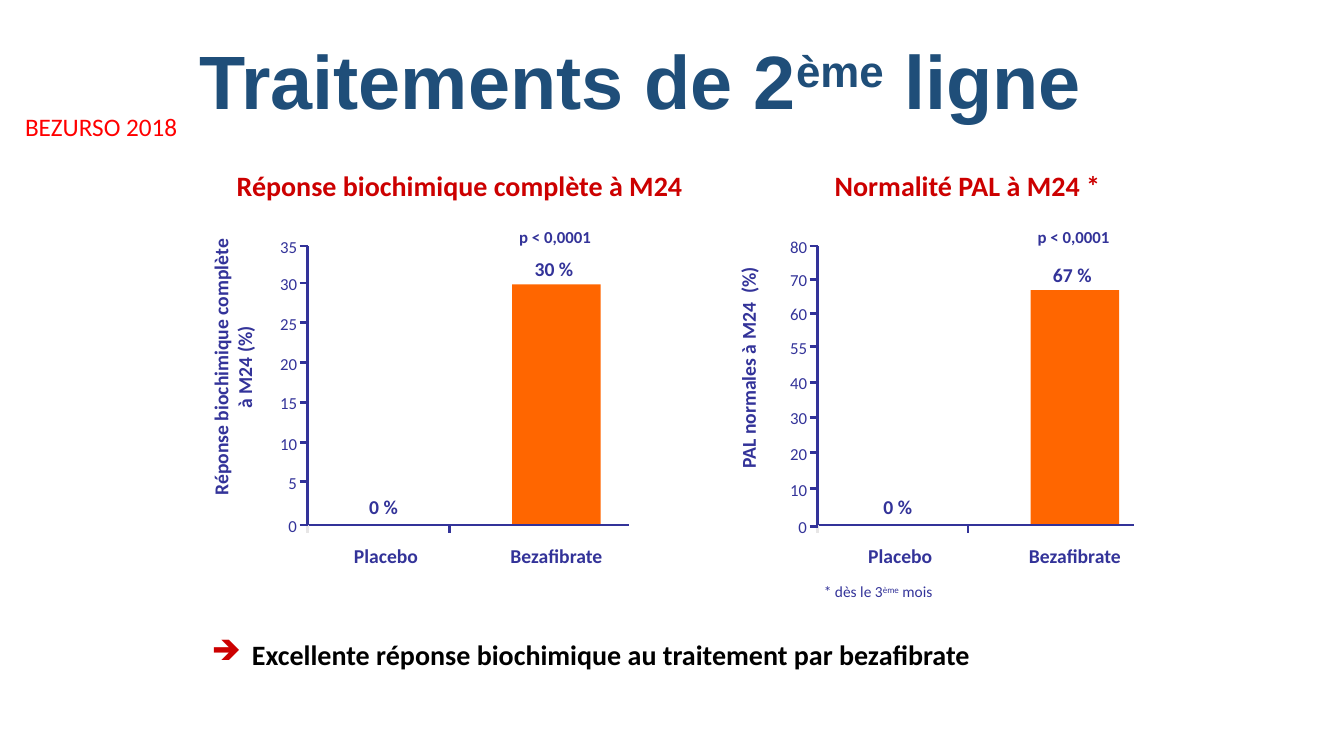
from pptx import Presentation
from pptx.dml.color import RGBColor
from pptx.enum.shapes import MSO_CONNECTOR, MSO_SHAPE
from pptx.enum.text import MSO_AUTO_SIZE, PP_ALIGN
from pptx.oxml.ns import qn
from pptx.util import Inches, Pt
from lxml.etree import SubElement

CELL = Inches(7.5) / 18
AXIS_TOP, AXIS_BOTTOM = 5.86, 12.5
TICK = 0.19
BAR_WIDTH = 2.11
INK, RED, ORANGE, PALE = "333399", "CC0000", "FF6600", "E7E6E6"

LEFT_TICKS = {"0": 12.5, "5": 11.47, "10": 10.54, "15": 9.58,
              "20": 8.64, "25": 7.68, "30": 6.74, "35": 5.86}
RIGHT_TICKS = {"0": 12.53, "10": 11.64, "20": 10.78, "30": 9.94, "40": 9.1,
               "55": 8.26, "60": 7.46, "70": 6.65, "80": 5.86}


def grid(*cells):
    return [round(c * CELL) for c in cells]


def rgb(value):
    return RGBColor.from_string(value)


def add_text(s, box, parts, size, color=INK, bold=False, align=None,
             inset=True, wrap=False, font="Calibri", rotation=0):
    sp = s.shapes.add_textbox(*grid(*box))
    sp.rotation = rotation
    tf = sp.text_frame
    tf.word_wrap = wrap
    tf.auto_size = MSO_AUTO_SIZE.SHAPE_TO_FIT_TEXT
    if not inset:
        tf.margin_left = tf.margin_right = tf.margin_top = tf.margin_bottom = 0
    p = tf.paragraphs[0]
    p.alignment = align
    p.text = parts[0]
    for part in parts[1:]:
        p.add_run().text = part
    for r in p.runs:
        r.font.name = font
        r.font.size = Pt(size)
        r.font.bold = bold
        r.font.color.rgb = rgb(color)
    if len(parts) > 1:
        p.runs[1].font._element.set("baseline", "30000")
    return p


def add_label(s, center, top, width, text, size=14):
    height = size / 29
    add_text(s, (center - width / 2, top, width, height), [text], size,
             bold=True, align=PP_ALIGN.CENTER, inset=False)


def add_line(s, x1, y1, x2, y2, color=INK):
    cx = s.shapes.add_connector(MSO_CONNECTOR.STRAIGHT, *grid(x1, y1, x2, y2))
    cx.line.color.rgb = rgb(color)
    cx.line.width = Pt(0)
    SubElement(cx._element.spPr, qn("a:effectLst"))


def add_bar(s, left, top):
    sp = s.shapes.add_shape(MSO_SHAPE.RECTANGLE,
                            *grid(left, top, BAR_WIDTH, AXIS_BOTTOM - top))
    sp.shadow.inherit = False
    sp.fill.solid()
    sp.fill.fore_color.rgb = rgb(ORANGE)
    sp.line.fill.background()


def add_bullet(p, char, color, indent):
    pPr = p._p.get_or_add_pPr()
    pPr.set("marL", str(indent))
    pPr.set("indent", str(-indent))
    clr = SubElement(pPr, qn("a:buClr"))
    SubElement(clr, qn("a:srgbClr")).set("val", color)
    SubElement(pPr, qn("a:buChar")).set("char", char)


def add_bar_panel(s, axis, end, divider, ticks, bar, bar_top, value, placebo):
    add_bar(s, bar, bar_top)
    add_line(s, axis, AXIS_TOP, axis, AXIS_BOTTOM)
    add_line(s, axis, AXIS_BOTTOM, end, AXIS_BOTTOM)
    for x, color in ((axis, PALE), (divider, INK)):
        add_line(s, x, AXIS_BOTTOM + TICK, x, AXIS_BOTTOM, color)
    for text, y in ticks.items():
        add_line(s, axis - TICK, y, axis, y)
        width = 0.21 * len(text)
        add_text(s, (axis - 0.25 - width, y - 0.22, width, 0.48), [text], 12,
                 align=PP_ALIGN.RIGHT, inset=False)
    middle = bar + BAR_WIDTH / 2
    add_label(s, middle - 0.03, 5.4, 1.75, "p < 0,0001", 12)
    add_label(s, middle - 0.06, bar_top - 0.66, 0.94, value)
    add_label(s, middle, 12.96, 2.21, "Bezafibrate")
    add_label(s, placebo - 0.06, 11.78, 0.7, "0 %")
    add_label(s, placebo, 12.96, 1.54, "Placebo")


def main():
    prs = Presentation()
    prs.slide_width, prs.slide_height = Inches(13.33), Inches(7.5)
    s = prs.slides.add_slide(prs.slide_layouts[6])

    add_text(s, (4.51, 0.7, 22.49, 2.42), ["Traitements de 2", "ème", " ligne"],
             54, "1F4E79", bold=True, font="Arial")
    add_text(s, (0.36, 2.54, 4.13, 0.96), ["BEZURSO 2018"], 18, "FF0000")
    for left, width, text in ((5.35, 11.18, "Réponse biochimique complète à M24"),
                              (19.61, 6.84, "Normalité PAL à M24 *")):
        add_text(s, (left, 3.89, width, 1.06), [text], 20, RED, bold=True,
                 align=PP_ALIGN.CENTER)
    for box, text in (
            ((2.23, 8.06, 6.62, 1.37), "Réponse biochimique complète\nà M24 (%)"),
            ((15.17, 8.35, 5.3, 0.82), "PAL normales à M24  (%)")):
        add_text(s, box, [text], 14, bold=True, align=PP_ALIGN.CENTER, rotation=270)

    add_bar_panel(s, 7.32, 14.98, 10.7, LEFT_TICKS, 12.19, 6.77, "30 %", 9.19)
    add_bar_panel(s, 19.46, 27, 23.04, RIGHT_TICKS, 24.53, 6.91, "67 %", 21.43)

    add_text(s, (19.61, 13.87, 2.74, 0.46), ["* dès le 3", "ème", " mois"], 11,
             inset=False)
    p = add_text(s, (4.8, 15.05, 23.21, 1.03),
                 ["Excellente réponse biochimique au traitement par bezafibrate"],
                 20, "000000", bold=True, wrap=True)
    add_bullet(p, "➔", RED, Inches(0.4))

    prs.save("out.pptx")


if __name__ == "__main__":
    main()
